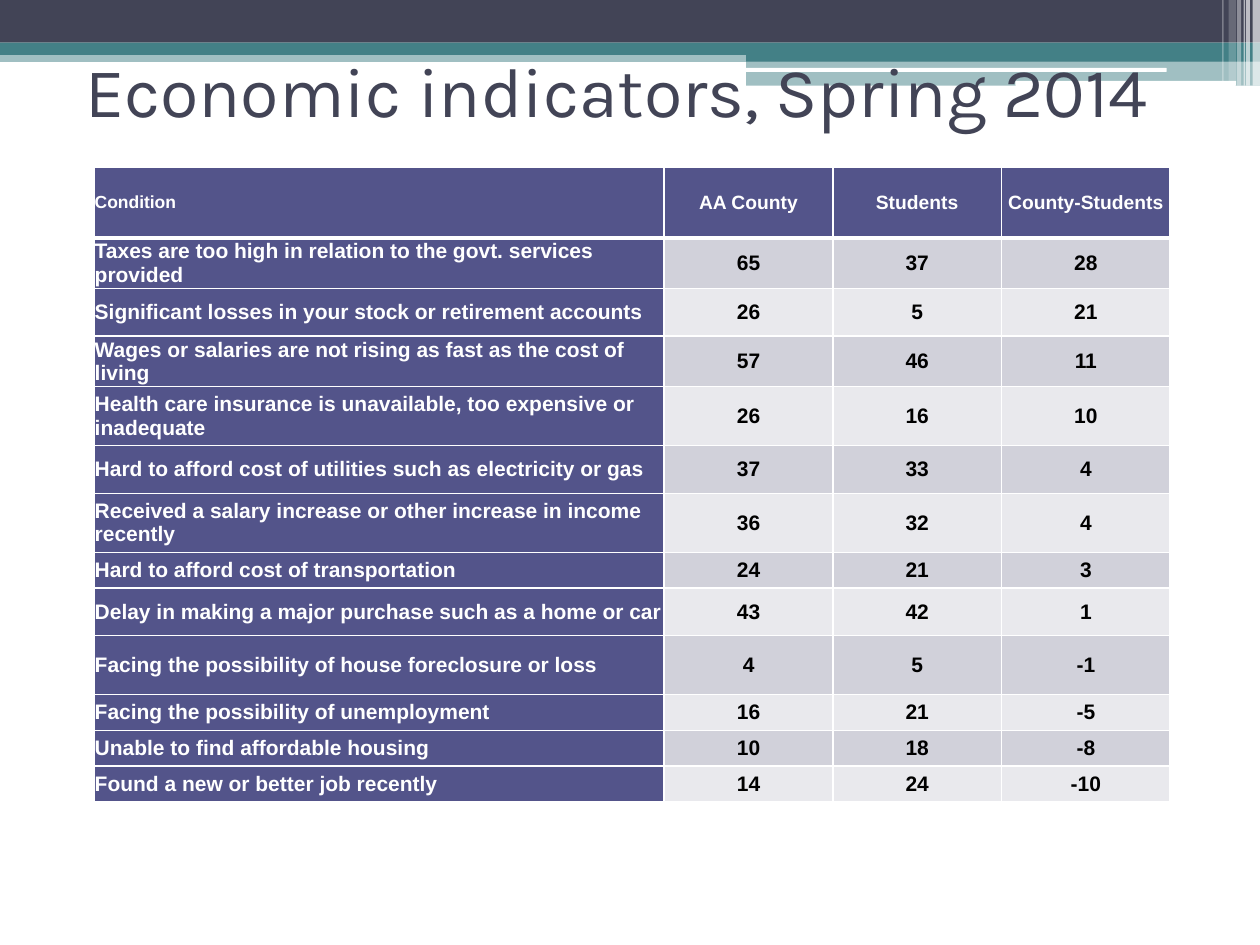
from lxml.etree import SubElement
from pptx import Presentation
from pptx.dml.color import RGBColor
from pptx.enum.shapes import MSO_SHAPE
from pptx.enum.text import MSO_ANCHOR, PP_ALIGN
from pptx.oxml.ns import qn
from pptx.util import Cm, Pt

HUES = {
    "white": "FFFFFF", "black": "000000", "slate": "424456", "teal": "438086",
    "indigo": "53548A", "dark": "D1D1DA", "light": "E9E9ED",
}
BANDS = [
    (0, 1.02, 25.4, 0.23, "teal", 50),
    (0, 0, 25.4, 0.86, "slate", 100),
    (0, 0.86, 25.4, 0.25, "teal", 100),
    (15.04, 0.99, 10.36, 0.25, "teal", 100),
    (15.04, 1.22, 10.36, 0.51, "teal", 50),
]
PILLS = [(15.01, 1.37, 8.51, 0.08), (20.47, 1.63, 4.45, 0.1)]
STRIPES = [
    (25.25, 0.15, 1.73, 65), (25.12, 0.08, 1.73, 65), (25.07, 0.03, 1.73, 60),
    (24.94, 0.08, 1.73, 40), (24.77, 0.15, 1.63, 20), (24.64, 0.03, 1.63, 30),
]
HEAD = ("Condition", "AA County", "Students", "County-Students")
ROWS = [
    ("Taxes are too high in relation to the govt. services provided", 65, 37, 28),
    ("Significant losses in your stock or retirement accounts", 26, 5, 21),
    ("Wages or salaries are not rising as fast as the cost of living", 57, 46, 11),
    ("Health care insurance is unavailable, too expensive or inadequate", 26, 16, 10),
    ("Hard to afford cost of utilities such as electricity or gas", 37, 33, 4),
    ("Received a salary increase or other increase in income recently", 36, 32, 4),
    ("Hard to afford cost of transportation", 24, 21, 3),
    ("Delay in making a major purchase such as a home or car", 43, 42, 1),
    ("Facing the possibility of house foreclosure or loss", 4, 5, -1),
    ("Facing the possibility of unemployment", 16, 21, -5),
    ("Unable to find affordable housing", 10, 18, -8),
    ("Found a new or better job recently", 14, 24, -10),
]
WIDTHS = [11.48, 3.4, 3.4, 3.4]
LOW, MID, TALL = 0.72, 0.96, 1.19
HEIGHTS = [1.42, MID, MID, MID, TALL, MID, TALL, LOW, MID, TALL, LOW, LOW, LOW]


class Painter:
    """Draws styled elements on the current slide."""

    def __init__(self, slide):
        self.slide = slide
        self.hues = {name: RGBColor.from_string(hue) for name, hue in HUES.items()}

    def bar(self, left, top, width, height, hue, alpha=100, kind=MSO_SHAPE.RECTANGLE):
        shape = self.slide.shapes.add_shape(kind, Cm(left), Cm(top), Cm(width), Cm(height))
        shape.shadow.inherit = False
        shape.line.fill.background()
        shape.fill.solid()
        shape.fill.fore_color.rgb = self.hues[hue]
        if alpha < 100:
            color = shape.fill._xPr.find(qn("a:solidFill"))[0]
            SubElement(color, qn("a:alpha"), val=str(alpha * 1000))

    def font(self, para, name, size, hue, bold=False):
        font = para.font
        font.name, font.size, font.bold = name, Pt(size), bold
        font.color.rgb = self.hues[hue]

    def title(self, text, left, top, width, height):
        box = self.slide.shapes.add_textbox(Cm(left), Cm(top), Cm(width), Cm(height))
        frame = box.text_frame
        frame.word_wrap = True
        frame.vertical_anchor = MSO_ANCHOR.MIDDLE
        frame.text = text
        self.font(frame.paragraphs[0], "Karla", 40, "slate")

    def edge(self, cell, side, width):
        line = SubElement(cell._tc.get_or_add_tcPr(), qn(f"a:ln{side}"), w=str(Pt(width)))
        fill = SubElement(line, qn("a:solidFill"))
        SubElement(fill, qn("a:srgbClr"), val=HUES["white"])

    def cell(self, cell, text, row, col):
        cell.text = str(text)
        cell.vertical_anchor = MSO_ANCHOR.MIDDLE
        cell.margin_left = cell.margin_right = cell.margin_top = cell.margin_bottom = 0
        for side in "LRTB":
            thick = (row, side) in ((0, "B"), (1, "T"))
            self.edge(cell, side, 3 if thick else 1)
        label = row == 0 or col == 0
        cell.fill.solid()
        cell.fill.fore_color.rgb = self.hues["indigo" if label else "dark" if row % 2 else "light"]
        para = cell.text_frame.paragraphs[0]
        para.alignment = PP_ALIGN.CENTER if col else PP_ALIGN.LEFT
        size = 12 if row else 11 if col else 10
        self.font(para, "Arial", size, "white" if label else "black", True)

    def table(self, rows, left, top, widths, heights):
        table = self.slide.shapes.add_table(
            len(rows), len(widths), Cm(left), Cm(top), Cm(sum(widths)), Cm(sum(heights))
        ).table
        for col, width in zip(table.columns, widths):
            col.width = Cm(width)
        for line, height in zip(table.rows, heights):
            line.height = Cm(height)
        for row, texts in enumerate(rows):
            for col, text in enumerate(texts):
                self.cell(table.cell(row, col), text, row, col)


def main():
    deck = Presentation()
    deck.slide_width, deck.slide_height = Cm(25.4), Cm(19.05)
    paint = Painter(deck.slides.add_slide(deck.slide_layouts[6]))
    for band in BANDS:
        paint.bar(*band)
    for pill in PILLS:
        paint.bar(*pill, "white", kind=MSO_SHAPE.ROUNDED_RECTANGLE)
    for left, width, height, alpha in STRIPES:
        paint.bar(left, 0, width, height, "white", alpha)
    paint.title("Economic indicators, Spring 2014", 1.47, 1.07, 22.23, 1.47)
    paint.table([HEAD, *ROWS], 1.91, 3.38, WIDTHS, HEIGHTS)
    deck.save("out.pptx")


if __name__ == "__main__":
    main()
